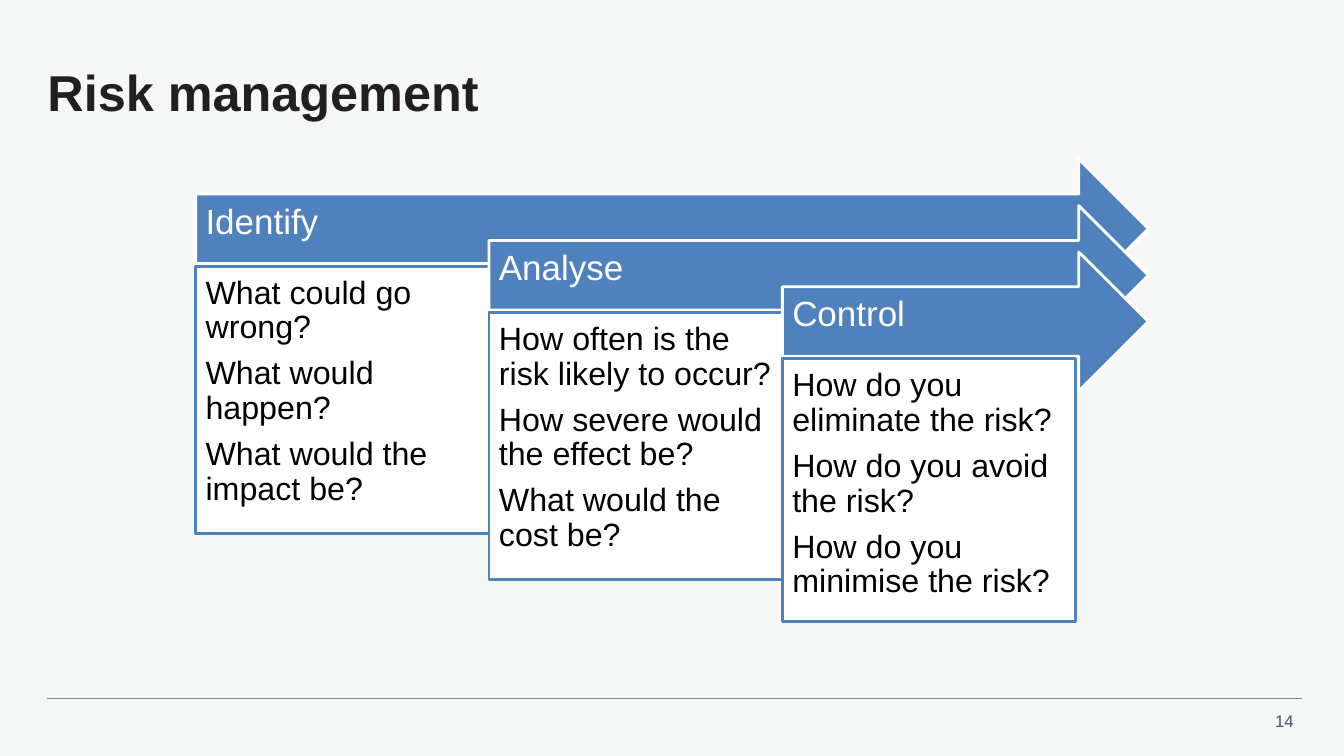
import pptx
import pptx.dml.color
import pptx.enum.shapes
import pptx.enum.text
import pptx.oxml.ns
import pptx.util
from lxml import etree

RGBColor = pptx.dml.color.RGBColor
Anchor = pptx.enum.text.MSO_ANCHOR
Align = pptx.enum.text.PP_ALIGN
Preset = pptx.enum.shapes.MSO_SHAPE

BACKGROUND = RGBColor(0xF6, 0xF8, 0xF8)
INK = RGBColor(0x23, 0x1F, 0x20)
BLUE = RGBColor(0x4F, 0x81, 0xBD)
WHITE = RGBColor(0xFF, 0xFF, 0xFF)
BLACK = RGBColor(0x00, 0x00, 0x00)
RULE = RGBColor(0x76, 0x86, 0x92)
SLATE = RGBColor(0x42, 0x55, 0x63)

SLIDE_WIDTH, SLIDE_HEIGHT = 13.33, 7.5
MARGIN = 0.47
GRID_LEFT, COLUMN = 1.94, 2.91
ARROW_TOP, PANEL_TOP, ROW = 1.58, 2.64, 0.46
ARROW_RIGHT, ARROW_HEIGHT = 11.39, 1.38

STAGES = [
    ("Identify", 2.65, ["What could go wrong?", "What would happen?",
                        "What would the impact be?"]),
    ("Analyse", 2.65, ["How often is the risk likely to occur?",
                       "How severe would the effect be?",
                       "What would the cost be?"]),
    ("Control", 2.61, ["How do you eliminate the risk?",
                       "How do you avoid the risk?",
                       "How do you minimise the risk?"]),
]


class SlideBuilder:
    font_name = "Arial"

    def __init__(self, presentation):
        self.slide = presentation.slides.add_slide(presentation.slide_layouts[5])
        fill = self.slide.background.fill
        fill.solid()
        fill.fore_color.rgb = BACKGROUND

    def box(self, left, top, width, height):
        return [pptx.util.Inches(value) for value in (left, top, width, height)]

    def set_text(self, shape, texts, size, color, insets, anchor=Anchor.TOP,
                 align=Align.LEFT, bold=False, line_spacing=0.9, after=0, wrap=True):
        frame = shape.text_frame
        frame.word_wrap = wrap
        frame.auto_size = pptx.enum.text.MSO_AUTO_SIZE.NONE
        frame.vertical_anchor = anchor
        (frame.margin_left, frame.margin_top,
         frame.margin_right, frame.margin_bottom) = self.box(*insets)
        for index, text in enumerate(texts):
            paragraph = frame.add_paragraph() if index else frame.paragraphs[0]
            paragraph.alignment = align
            paragraph.line_spacing = line_spacing
            paragraph.space_before = pptx.util.Pt(0)
            paragraph.space_after = pptx.util.Pt(after)
            run = paragraph.add_run()
            run.text = text
            run.font.name = self.font_name
            run.font.size = pptx.util.Pt(size)
            run.font.bold = bold
            run.font.color.rgb = color

    def title(self, text):
        title = self.slide.shapes.title
        title.left, title.top, title.width, title.height = self.box(
            MARGIN, MARGIN, 12.47, 0.95)
        self.set_text(title, [text], 36, INK, (0, 0, 0, 0), Anchor.MIDDLE, bold=True)

    def block(self, preset, bounds, fill, line):
        shape = self.slide.shapes.add_shape(preset, *self.box(*bounds))
        shape.shadow.inherit = False
        shape.fill.solid()
        shape.fill.fore_color.rgb = fill
        shape.line.color.rgb = line
        shape.line.width = pptx.util.Pt(2)
        return shape

    def stage(self, step, name, panel_height, questions):
        left = GRID_LEFT + step * COLUMN
        drop = step * ROW
        arrow = self.block(
            Preset.RIGHT_ARROW,
            (left, ARROW_TOP + drop, ARROW_RIGHT - left, ARROW_HEIGHT), BLUE, WHITE)
        self.set_text(arrow, [name], 25, WHITE, (0.1, 0.1, 0.28, 0.22), Anchor.MIDDLE)
        panel = self.block(
            Preset.RECTANGLE,
            (left, PANEL_TOP + drop, COLUMN, panel_height), WHITE, BLUE)
        self.set_text(panel, questions, 23, BLACK, (0.1, 0.1, 0.1, 0.1), after=8)

    def footer(self, number):
        left, top, right, bottom = self.box(MARGIN, 6.93, 12.91, 6.93)
        rule = self.slide.shapes.add_connector(
            pptx.enum.shapes.MSO_CONNECTOR.STRAIGHT, left, top, right, bottom)
        rule.line.color.rgb = RULE
        rule.line.width = pptx.util.Pt(0.5)
        etree.SubElement(rule._element.spPr, pptx.oxml.ns.qn("a:effectLst"))
        label = self.slide.shapes.add_textbox(*self.box(12.52, 7, 0.41, 0.3))
        self.set_text(label, [number], 12, SLATE, (0.1, 0.05, 0.1, 0.05),
                      align=Align.RIGHT, line_spacing=1, wrap=False)


def main():
    presentation = pptx.Presentation()
    presentation.slide_width = pptx.util.Inches(SLIDE_WIDTH)
    presentation.slide_height = pptx.util.Inches(SLIDE_HEIGHT)
    builder = SlideBuilder(presentation)
    builder.footer("14")
    builder.title("Risk management")
    for step, (name, panel_height, questions) in enumerate(STAGES):
        builder.stage(step, name, panel_height, questions)
    presentation.save("out.pptx")


if __name__ == "__main__":
    main()
